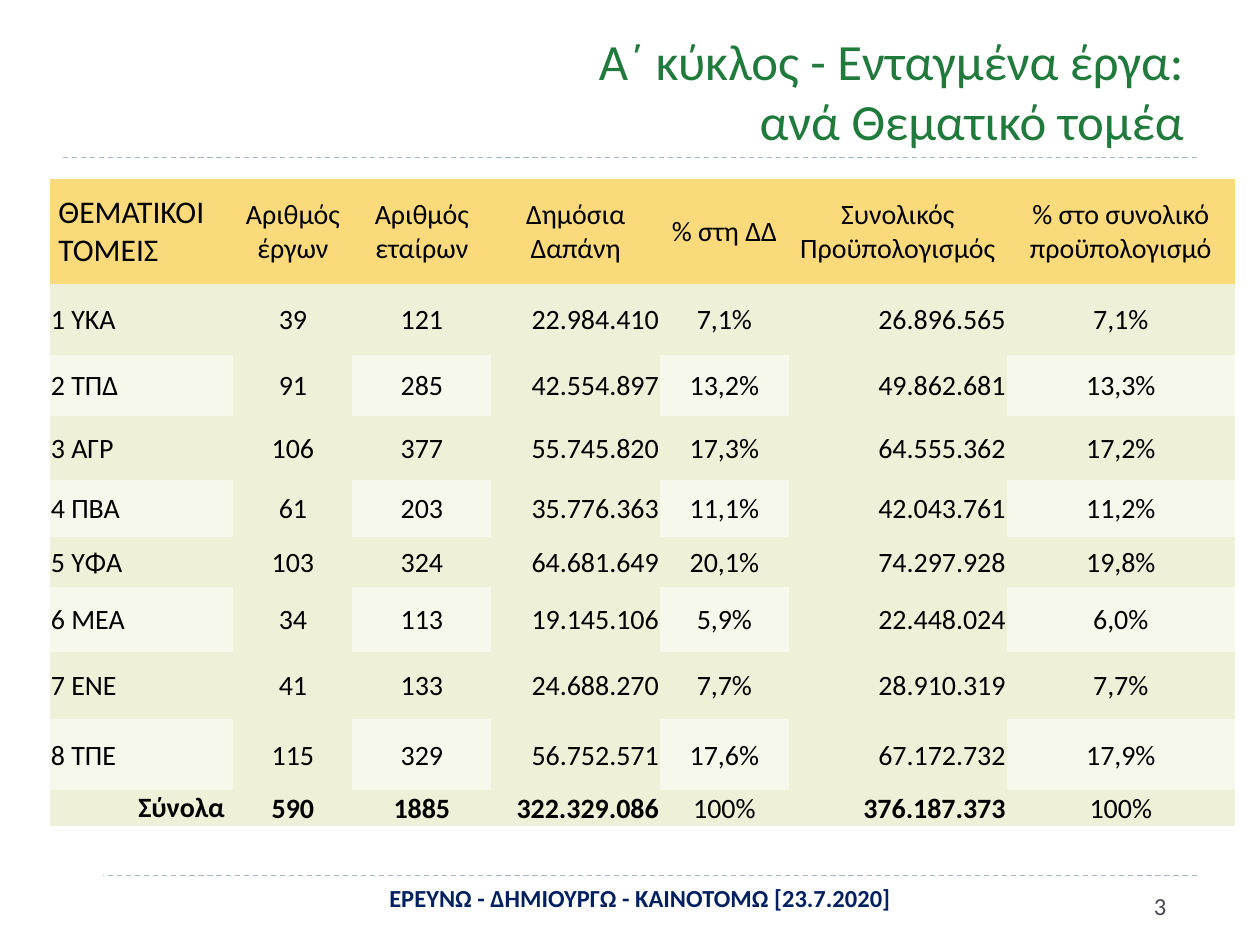
"""Build the slide on funded projects of the first cycle by thematic sector."""
from pptx import Presentation, util as u
from pptx.dml.color import RGBColor
from pptx.enum import dml, shapes, text
from pptx.oxml.ns import qn
from lxml import etree

Pt = u.Pt
COLORS = {"title": "207A3C", "rule": "9FB8CD", "header": "FADA7A", "band": "EEF1D7",
          "light": "F7F8EC", "body": "000000", "footer": "002060", "number": "464653",
          "white": "FFFFFF"}
LEFT, CENTER, RIGHT = text.PP_ALIGN.LEFT, text.PP_ALIGN.CENTER, text.PP_ALIGN.RIGHT
NO_STYLE = "{2D5ABB26-0587-4C30-8999-92F81FD0307C}"


def write(frame, words, size, color, align, bold=False):
    frame.text = words
    frame.word_wrap = True
    for paragraph in frame.paragraphs:
        paragraph.alignment = align
        for run in paragraph.runs:
            run.font.name = "Calibri"
            run.font.size = Pt(size)
            run.font.bold = bold
            run.font.color.rgb = RGBColor.from_string(COLORS[color])


prs = Presentation()
prs.slide_width, prs.slide_height = Pt(720), Pt(540)
slide = prs.slides.add_slide(prs.slide_layouts[5])

for y in (500.4, 90):
    rule = slide.shapes.add_connector(shapes.MSO_CONNECTOR.STRAIGHT, Pt(36), Pt(y), Pt(684), Pt(y))
    rule.line.color.rgb = RGBColor.from_string(COLORS["rule"])
    rule.line.width = Pt(0.75)
    rule.line.dash_style = dml.MSO_LINE.DASH
    etree.SubElement(rule._element.spPr, qn("a:effectLst"))

corner = slide.shapes.add_shape(shapes.MSO_SHAPE.RECTANGLE, Pt(31), Pt(493), Pt(28), Pt(32))
corner.shadow.inherit = False
corner.fill.solid()
corner.fill.fore_color.rgb = RGBColor.from_string(COLORS["white"])
corner.line.fill.background()

title = slide.shapes.title
title.left, title.top, title.width, title.height = Pt(87.8), Pt(12.2), Pt(596.2), Pt(77.8)
write(title.text_frame, "Α΄ κύκλος - Ενταγμένα έργα:\vανά Θεματικό τομέα", 29, "title", RIGHT)
title.text_frame.vertical_anchor = text.MSO_ANCHOR.BOTTOM
title.text_frame.auto_size = text.MSO_AUTO_SIZE.NONE

rows = [
    ["ΘΕΜΑΤΙΚΟΙ ΤΟΜΕΙΣ", "Αριθμός έργων", "Αριθμός εταίρων", "Δημόσια Δαπάνη", "% στη ΔΔ",
     "Συνολικός Προϋπολογισμός", "% στο συνολικό προϋπολογισμό"],
    ["1 ΥΚΑ", "39", "121", "22.984.410", "7,1%", "26.896.565", "7,1%"],
    ["2 ΤΠΔ", "91", "285", "42.554.897", "13,2%", "49.862.681", "13,3%"],
    ["3 ΑΓΡ", "106", "377", "55.745.820", "17,3%", "64.555.362", "17,2%"],
    ["4 ΠΒΑ", "61", "203", "35.776.363", "11,1%", "42.043.761", "11,2%"],
    ["5 ΥΦΑ", "103", "324", "64.681.649", "20,1%", "74.297.928", "19,8%"],
    ["6 ΜΕΑ", "34", "113", "19.145.106", "5,9%", "22.448.024", "6,0%"],
    ["7 ΕΝΕ", "41", "133", "24.688.270", "7,7%", "28.910.319", "7,7%"],
    ["8 ΤΠΕ", "115", "329", "56.752.571", "17,6%", "67.172.732", "17,9%"],
    ["Σύνολα", "590", "1885", "322.329.086", "100%", "376.187.373", "100%"],
]
widths = [105, 68, 79.4, 96.4, 73.6, 124.6, 130.3]
heights = [60, 40.5, 34.8, 36.6, 32.5, 29, 36.6, 38.8, 40.6, 20.4]
aligns = [LEFT, CENTER, CENTER, RIGHT, CENTER, RIGHT, CENTER]
total = len(rows) - 1

frame = slide.shapes.add_table(len(rows), len(widths), Pt(28.4), Pt(102.4),
                               Pt(sum(widths)), Pt(sum(heights)))
sectors = frame.table
sectors._tbl.tblPr.find(qn("a:tableStyleId")).text = NO_STYLE
for column, width in zip(sectors.columns, widths):
    column.width = Pt(width)
for r, (values, height) in enumerate(zip(rows, heights)):
    sectors.rows[r].height = Pt(height)
    for c, value in enumerate(values):
        cell = sectors.cell(r, c)
        align = aligns[c]
        if r == 0 and c > 0:
            align = CENTER
        elif r == total and c == 0:
            align = RIGHT
        write(cell.text_frame, value, 18 if r == c == 0 else 16, "body", align,
              r == total and "%" not in value)
        wide = r == 0 or (r == total and c == 0)
        cell.margin_left = cell.margin_right = Pt(5 if wide else 0.7)
        cell.margin_top, cell.margin_bottom = Pt(0 if wide else 0.7), 0
        cell.vertical_anchor = text.MSO_ANCHOR.MIDDLE
        striped = r % 2 == 0 and c % 2 == 0
        fill = "header" if r == 0 else "light" if striped else "band"
        cell.fill.solid()
        cell.fill.fore_color.rgb = RGBColor.from_string(COLORS[fill])

footer = slide.shapes.add_textbox(Pt(139), Pt(501), Pt(453.6), Pt(24))
write(footer.text_frame, "ΕΡΕΥΝΩ - ΔΗΜΙΟΥΡΓΩ - ΚΑΙΝΟΤΟΜΩ [23.7.2020]", 14, "footer", CENTER, True)
number = slide.shapes.add_textbox(Pt(652.3), Pt(505.4), Pt(36), Pt(28.8))
write(number.text_frame, "3", 14, "number", LEFT)

prs.save("out.pptx")
